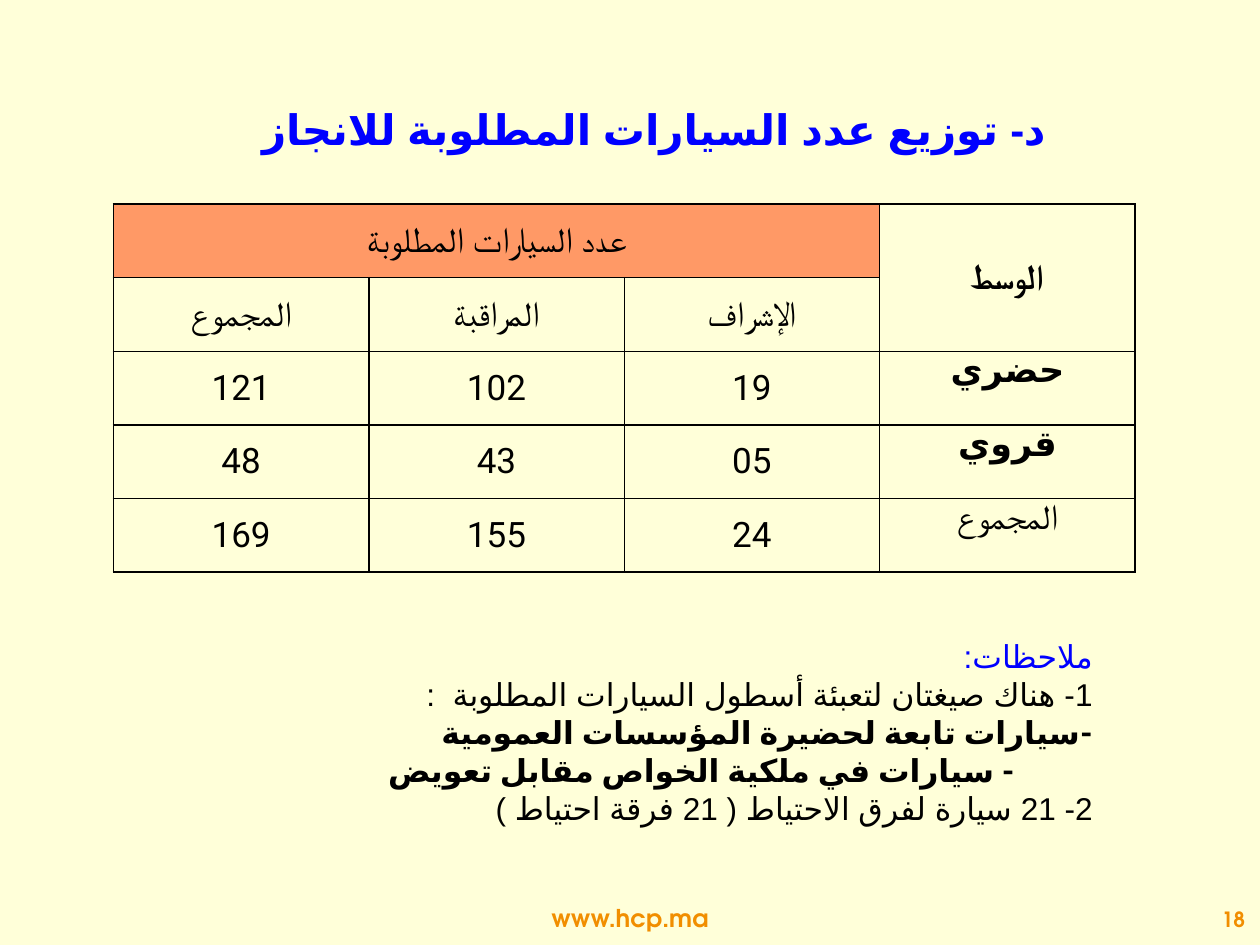
from dataclasses import dataclass

from lxml.etree import SubElement
from pptx import Presentation
from pptx.dml.color import RGBColor
from pptx.enum.lang import MSO_LANGUAGE_ID
from pptx.enum.text import MSO_ANCHOR, PP_ALIGN
from pptx.oxml.ns import qn
from pptx.util import Inches, Pt


@dataclass(frozen=True)
class Theme:
    background: RGBColor = RGBColor(0xFF, 0xFF, 0xD9)
    header: RGBColor = RGBColor(0xFF, 0x99, 0x66)
    accent: RGBColor = RGBColor(0x00, 0x00, 0xFF)
    ink: RGBColor = RGBColor(0x00, 0x00, 0x00)
    footer: RGBColor = RGBColor(0xF1, 0x8E, 0x00)
    border: str = "000000"
    title_size: int = 24
    table_size: int = 20
    note_size: int = 18
    site_size: int = 14
    page_size: int = 12
    sans: str = "Arial"
    serif: str = "Times New Roman"
    number: str = "Roboto"
    brand: str = "TeX Gyre Adventor"


THEME = Theme()


@dataclass(frozen=True)
class Line:
    text: str
    size: int
    font: str = THEME.sans
    color: RGBColor = THEME.ink
    bold: bool = False
    align: PP_ALIGN = PP_ALIGN.CENTER
    rtl: bool = False
    indent: float = 0
    tab: float | None = None


@dataclass(frozen=True)
class Box:
    left: float
    top: float
    width: float
    height: float
    lines: tuple[Line, ...]
    anchor: MSO_ANCHOR = MSO_ANCHOR.MIDDLE
    bottom_inset: float = 0.05


@dataclass(frozen=True)
class TableCell:
    row: int
    col: int
    line: Line
    rows: int = 1
    cols: int = 1
    fill: RGBColor | None = None
    anchor: MSO_ANCHOR = MSO_ANCHOR.MIDDLE


def set_values(target, values: dict) -> None:
    for name, value in values.items():
        setattr(target, name, value)


def write_line(p, line: Line) -> None:
    pPr = p._p.get_or_add_pPr()
    if line.rtl:
        pPr.set("rtl", "1")
    pPr.set("marL", "0")
    pPr.set("indent", str(Inches(line.indent)))
    if line.tab is not None:
        tabs = SubElement(pPr, qn("a:tabLst"))
        SubElement(tabs, qn("a:tab"), pos=str(Inches(line.tab)), algn="l")
    p.alignment = line.align
    r = p.add_run()
    r.text = line.text
    set_values(r.font, {
        "name": line.font,
        "size": Pt(line.size),
        "bold": line.bold,
        "language_id": MSO_LANGUAGE_ID.ARABIC_MOROCCO,
    })
    r.font.color.rgb = line.color
    SubElement(r._r.get_or_add_rPr(), qn("a:cs"), typeface=line.font)


def draw_box(s, box: Box) -> None:
    sp = s.shapes.add_textbox(
        Inches(box.left), Inches(box.top), Inches(box.width), Inches(box.height)
    )
    tf = sp.text_frame
    set_values(tf, {
        "word_wrap": True,
        "vertical_anchor": box.anchor,
        "margin_bottom": Inches(box.bottom_inset),
    })
    for i, line in enumerate(box.lines):
        write_line(tf.add_paragraph() if i else tf.paragraphs[0], line)


def draw_borders(cell) -> None:
    tcPr = cell._tc.get_or_add_tcPr()
    for side in ("lnL", "lnR", "lnT", "lnB"):
        ln = SubElement(tcPr, qn(f"a:{side}"), w=str(Pt(1)))
        fill = SubElement(ln, qn("a:solidFill"))
        SubElement(fill, qn("a:srgbClr"), val=THEME.border)


def draw_table(s, cells: list[TableCell]) -> None:
    frame = s.shapes.add_table(5, 4, Inches(0.9), Inches(1.62), Inches(8.11), Inches(2.92))
    table = frame.table
    set_values(table, {"first_row": False, "horz_banding": False})
    for cell in table.iter_cells():
        draw_borders(cell)
        cell.fill.background()
    for item in cells:
        cell = table.cell(item.row, item.col)
        if item.rows > 1 or item.cols > 1:
            cell.merge(table.cell(item.row + item.rows - 1, item.col + item.cols - 1))
        if item.fill is not None:
            cell.fill.solid()
            cell.fill.fore_color.rgb = item.fill
        set_values(cell, {
            "vertical_anchor": item.anchor,
            "margin_left": Inches(0.05),
            "margin_right": Inches(0.05),
            "margin_top": 0,
            "margin_bottom": 0,
        })
        write_line(cell.text_frame.paragraphs[0], item.line)


def vehicle_cells() -> list[TableCell]:
    size, serif = THEME.table_size, THEME.serif
    cells = [
        TableCell(0, 0, Line("عدد السيارات المطلوبة", size, serif), cols=3, fill=THEME.header),
        TableCell(0, 3, Line("الوسط", size, serif, bold=True), rows=2),
    ]
    for col, text in enumerate(("المجموع", "المراقبة", "الإشراف")):
        cells.append(TableCell(1, col, Line(text, size, serif)))
    data = (
        (Line("حضري", size, bold=True, rtl=True), ("121", "102", "19")),
        (Line("قروي", size, bold=True, rtl=True), ("48", "43", "05")),
        (Line("المجموع", size, serif), ("169", "155", "24")),
    )
    for row, (label, counts) in enumerate(data, start=2):
        for col, count in enumerate(counts):
            cells.append(TableCell(row, col, Line(count, size, THEME.number)))
        cells.append(TableCell(row, 3, label, anchor=MSO_ANCHOR.TOP))
    return cells


def note(text: str, indent: float = 0.74, **style) -> Line:
    return Line(text, THEME.note_size, align=PP_ALIGN.RIGHT, rtl=True,
                indent=indent, **style)


def main() -> None:
    prs = Presentation()
    set_values(prs, {"slide_width": Inches(10), "slide_height": Inches(7.5)})
    s = prs.slides.add_slide(prs.slide_layouts[6])
    s.background.fill.solid()
    s.background.fill.fore_color.rgb = THEME.background

    option = {"font": THEME.number, "bold": True}
    footer = {"font": THEME.brand, "color": THEME.footer, "bold": True}
    title = Line("د- توزيع عدد السيارات المطلوبة للانجاز", THEME.title_size,
                 color=THEME.accent, bold=True, rtl=True)
    notes = (
        note("ملاحظات:", color=THEME.accent),
        note("1- هناك صيغتان لتعبئة أسطول السيارات المطلوبة  :"),
        note("-\tسيارات تابعة لحضيرة المؤسسات العمومية", tab=1.46, **option),
        note("- سيارات في ملكية الخواص مقابل تعويض", indent=1.36, **option),
        note("2- 21 سيارة لفرق الاحتياط ( 21 فرقة احتياط )"),
    )
    site = Line("www.hcp.ma", THEME.site_size, **footer)
    page = Line("18", THEME.page_size, align=PP_ALIGN.RIGHT, **footer)

    draw_table(s, vehicle_cells())
    for box in (
        Box(1.33, 0.78, 7.72, 0.63, (title,), bottom_inset=0.2),
        Box(0.39, 5.01, 9.12, 1.92, notes, anchor=MSO_ANCHOR.TOP),
        Box(3.82, 7.12, 2.36, 0.33, (site,)),
        Box(8.46, 7.12, 1.52, 0.35, (page,)),
    ):
        draw_box(s, box)
    prs.save("out.pptx")


if __name__ == "__main__":
    main()
